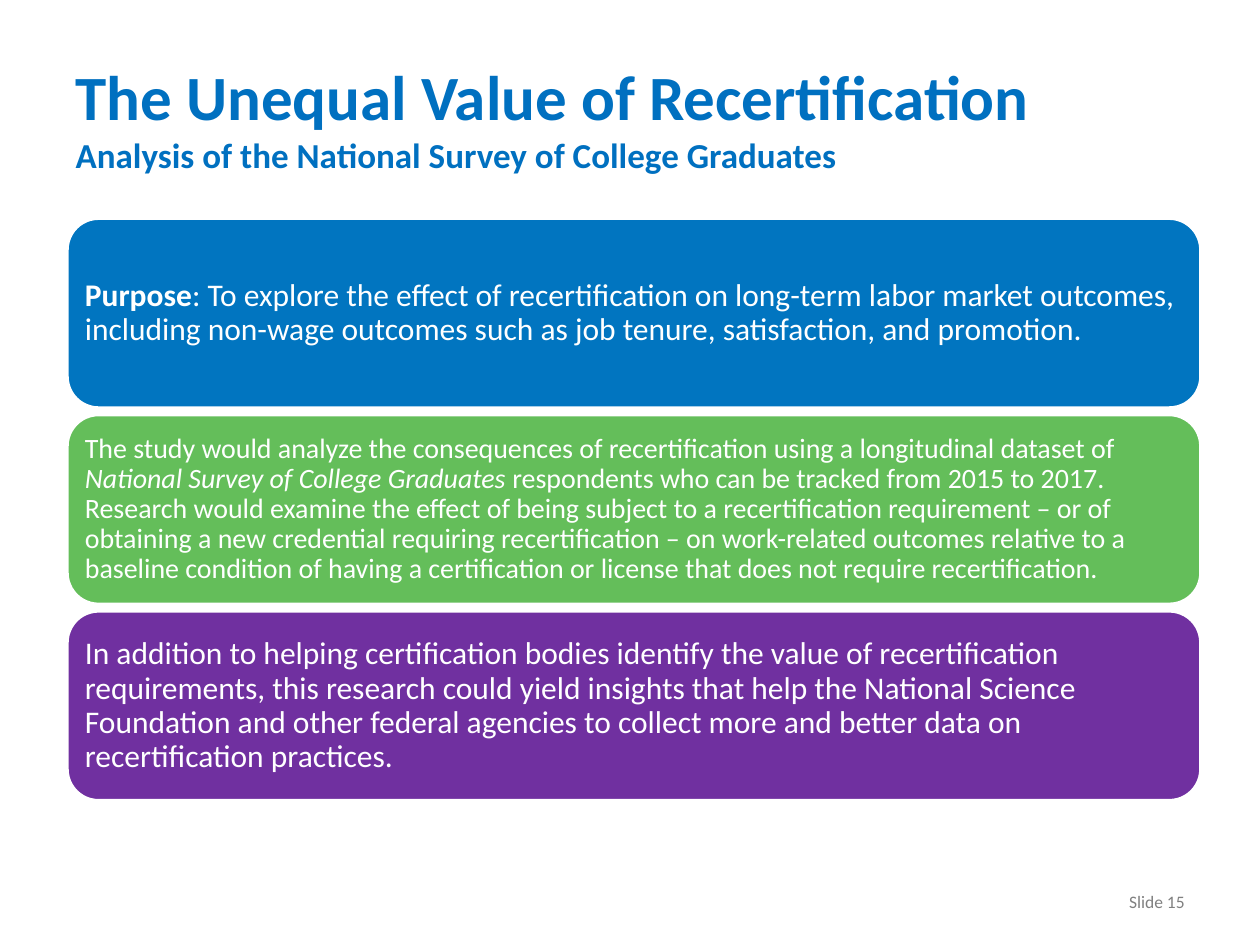
from pptx import Presentation
from pptx.dml.color import RGBColor
from pptx.enum.shapes import MSO_SHAPE
from pptx.enum.text import MSO_ANCHOR, MSO_AUTO_SIZE, PP_ALIGN
from pptx.util import Pt

TITLE_BLUE = RGBColor(0x00, 0x70, 0xC0)
BLUE = RGBColor(0x01, 0x75, 0xC0)
GREEN = RGBColor(0x64, 0xBE, 0x5A)
PURPLE = RGBColor(0x70, 0x30, 0xA0)
GRAY = RGBColor(0x80, 0x80, 0x80)
WHITE = RGBColor(0xFF, 0xFF, 0xFF)


def style(r, size, color, bold=False, italic=False):
    r.font.name = "Calibri"
    r.font.size = Pt(size)
    r.font.color.rgb = color
    r.font.bold = bold
    r.font.italic = italic


prs = Presentation()
prs.slide_width, prs.slide_height = Pt(720), Pt(540)
s = prs.slides.add_slide(prs.slide_layouts[5])

# Title and subtitle
title = s.shapes.title
title.left, title.top, title.width, title.height = Pt(36), Pt(21.6), Pt(648), Pt(90)
tf = title.text_frame
tf.text = "The Unequal Value of Recertification\nAnalysis of the National Survey of College Graduates"
tf.auto_size = MSO_AUTO_SIZE.NONE
tf.vertical_anchor = MSO_ANCHOR.MIDDLE
for p, size in zip(tf.paragraphs, (36, 20)):
    p.alignment = PP_ALIGN.LEFT
    style(p.runs[0], size, TITLE_BLUE, bold=True)

# Stacked panels: fill, text size, runs as (text, bold, italic)
panels = [
    (BLUE, 18, [
        ("Purpose", True, False),
        (": To explore the effect of recertification on long-term labor market outcomes, "
         "including non-wage outcomes such as job tenure, satisfaction, and promotion.", False, False),
    ]),
    (GREEN, 16, [
        ("The study would analyze the consequences of recertification using a longitudinal "
         "dataset of ", False, False),
        ("National Survey of College Graduates", False, True),
        (" respondents who can be tracked from 2015 to 2017. Research would examine the effect "
         "of being subject to a recertification requirement – or of obtaining a new credential "
         "requiring recertification – on work-related outcomes relative to a baseline condition "
         "of having a certification or license that does not require recertification.", False, False),
    ]),
    (PURPLE, 18, [
        ("In addition to helping certification bodies identify the value of recertification "
         "requirements, this research could yield insights that help the National Science "
         "Foundation and other federal agencies to collect more and better data on "
         "recertification practices.", False, False),
    ]),
]
PANEL_TOP, PANEL_HEIGHT, PANEL_STEP = 124.7, 108.5, 112.2
for i, (fill, size, runs) in enumerate(panels):
    sp = s.shapes.add_shape(MSO_SHAPE.ROUNDED_RECTANGLE, Pt(38.3), Pt(PANEL_TOP + i * PANEL_STEP),
                            Pt(648), Pt(PANEL_HEIGHT))
    sp.shadow.inherit = False
    sp.fill.solid()
    sp.fill.fore_color.rgb = fill
    sp.line.color.rgb = WHITE
    sp.line.width = Pt(2)
    tf = sp.text_frame
    tf.word_wrap = True
    tf.vertical_anchor = MSO_ANCHOR.MIDDLE
    tf.margin_left = tf.margin_right = tf.margin_top = tf.margin_bottom = Pt(5)
    p = tf.paragraphs[0]
    p.alignment = PP_ALIGN.LEFT
    p.line_spacing = 0.9
    for text, bold, italic in runs:
        r = p.add_run()
        r.text = text
        style(r, size, WHITE, bold, italic)

# Slide number
tf = s.shapes.add_textbox(Pt(516), Pt(500.5), Pt(168), Pt(28.8)).text_frame
tf.text = "Slide 15"
tf.word_wrap = True
tf.vertical_anchor = MSO_ANCHOR.MIDDLE
p = tf.paragraphs[0]
p.alignment = PP_ALIGN.RIGHT
style(p.runs[0], 10, GRAY)

prs.save("out.pptx")
